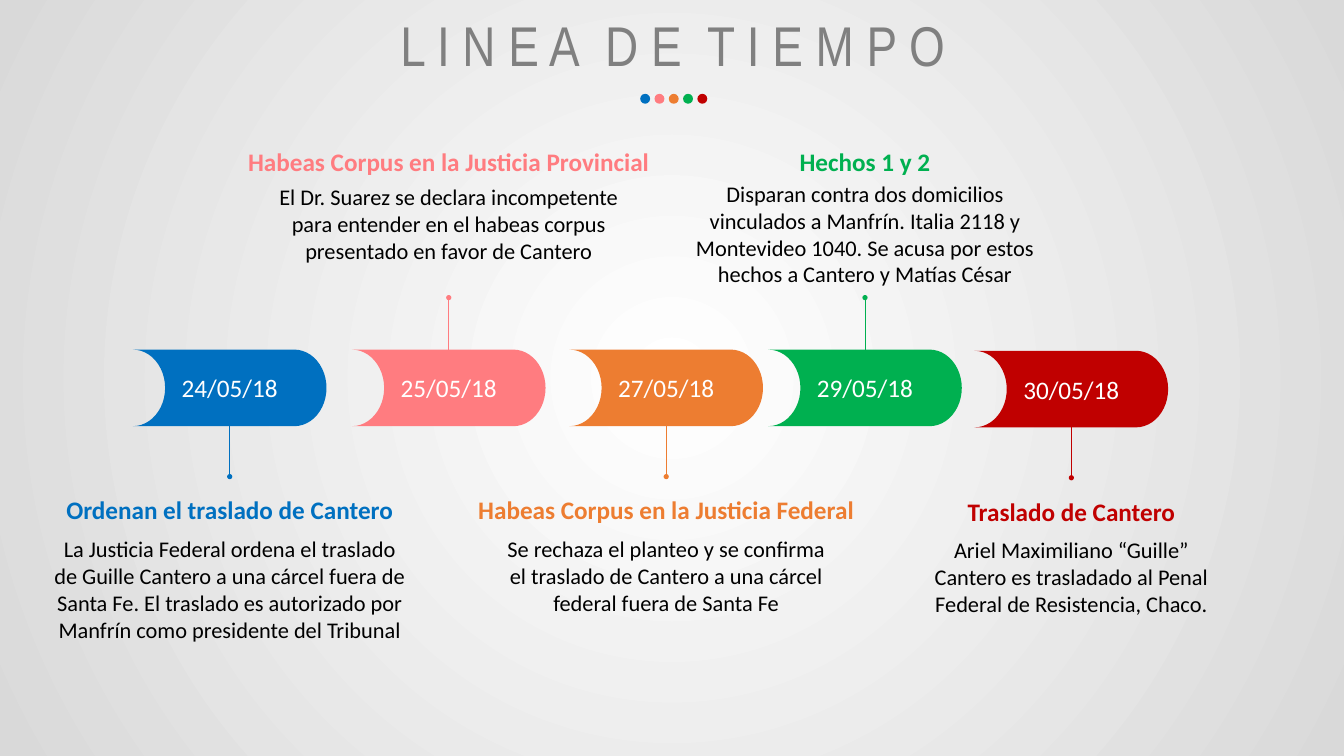
import dataclasses

import pptx
import pptx.dml.color
import pptx.enum.shapes
import pptx.enum.text
import pptx.oxml.ns
import pptx.util
from lxml import etree

Cm = pptx.util.Cm
Pt = pptx.util.Pt
Shape = pptx.enum.shapes.MSO_SHAPE
Anchor = pptx.enum.text.MSO_ANCHOR
qn = pptx.oxml.ns.qn


def rgb(code):
    return pptx.dml.color.RGBColor.from_string(code)


@dataclasses.dataclass
class Theme:
    blue: str = "0070C0"
    pink: str = "FF7C80"
    orange: str = "ED7D31"
    green: str = "00B050"
    red: str = "C00000"
    gray: str = "808080"
    black: str = "000000"
    white: str = "FFFFFF"
    edge: str = "D9D9D9"
    face: str = "Calibri"
    narrow: str = "Arial Narrow"
    big: int = 40
    head: int = 18
    body: int = 16


@dataclasses.dataclass
class Step:
    date: str
    color: str
    left: float
    head: str
    wide: float        # width of the heading
    body: str
    span: float        # width of the body text
    rows: int
    up: bool = False
    drop: float = 0    # small shift of the whole step
    lift: float = 0    # upward shift of the body text


class Board:
    def __init__(self, slide, theme):
        self.slide, self.theme = slide, theme

    def backdrop(self):
        fill = self.slide.background.fill
        fill.gradient()
        for stop, code in zip(fill.gradient_stops, (self.theme.white, self.theme.edge)):
            stop.color.rgb = rgb(code)
        grad = self.slide.element.find(".//" + qn("a:gradFill"))
        grad.remove(grad.find(qn("a:lin")))
        ring = etree.SubElement(grad, qn("a:path"), path="circle")
        etree.SubElement(ring, qn("a:fillToRect"), l="50000", t="50000", r="50000", b="50000")

    def run(self, para, text, size, color, face=None, bold=False):
        run = para.add_run()
        run.text = text
        font = run.font
        font.name, font.size, font.bold = face or self.theme.face, Pt(size), bold
        font.color.rgb = rgb(color)
        return run

    def center(self, frame, anchor):
        frame.word_wrap = True
        frame.vertical_anchor = anchor
        para = frame.paragraphs[0]
        para.alignment = pptx.enum.text.PP_ALIGN.CENTER
        return para

    def title(self, words, left, top, width, height):
        box = self.slide.shapes.title
        box.left, box.top, box.width, box.height = Cm(left), Cm(top), Cm(width), Cm(height)
        para = self.center(box.text_frame, Anchor.BOTTOM)
        box.text_frame.auto_size = pptx.enum.text.MSO_AUTO_SIZE.NONE
        para.line_spacing = 0.9
        style = (self.theme.big, self.theme.gray, self.theme.narrow)
        for i, word in enumerate(words):
            if i:  # widened gap between words
                gap = self.run(para, " ", *style)
                gap.font._element.set("spc", "900")
            self.run(para, word, *style)

    def text(self, text, mid, top, width, height, size, color, bold=False):
        box = self.slide.shapes.add_textbox(Cm(mid - width / 2), Cm(top), Cm(width), Cm(height))
        para = self.center(box.text_frame, Anchor.TOP)
        self.run(para, text, size, color, bold=bold)

    def shape(self, kind, left, top, width, height, color, home=None):
        shapes = (home or self.slide).shapes
        shape = shapes.add_shape(kind, Cm(left), Cm(top), Cm(width), Cm(height))
        shape.shadow.inherit = False
        shape.fill.solid()
        shape.fill.fore_color.rgb = rgb(color)
        shape.line.fill.background()
        return shape

    def pill(self, date, left, top, width, height, color):
        pill = self.shape(Shape.FLOWCHART_STORED_DATA, left, top, width, height, color)
        pill.element.spPr.find(qn("a:xfrm")).set("flipH", "1")
        para = self.center(pill.text_frame, Anchor.MIDDLE)
        self.run(para, date, self.theme.head, self.theme.white)
        return pill

    def stem(self, pill, side, mid, end, color):
        line = self.slide.shapes.add_connector(
            pptx.enum.shapes.MSO_CONNECTOR.STRAIGHT, Cm(mid), Cm(end), Cm(mid), Cm(end))
        line.begin_connect(pill, side)
        line.line.color.rgb = rgb(color)
        line.line.width = Pt(0.5)
        etree.SubElement(line.element.spPr, qn("a:effectLst"))

    def dot(self, mid, center, size, color, home=None):
        self.shape(Shape.OVAL, mid - size / 2, center - size / 2, size, size, color, home)

    def step(self, step):
        wide, tall, tip = 4.88, 1.93, 0.13
        top, mid = 8.81 + step.drop, step.left + wide / 2
        if step.up:
            side, end, head, body = 0, 7.5, 3.56, 4.5
        else:
            side, end, head, body = 2, 12.01, 12.34, 13.36
        end, head, body = (y + step.drop for y in (end, head, body))
        pill = self.pill(step.date, step.left, top, wide, tall, step.color)
        self.stem(pill, side, mid, end, step.color)
        self.dot(mid, end, tip, step.color)
        self.text(step.head, mid, head, step.wide, 1.02, self.theme.head, step.color, True)
        self.text(step.body, mid, body - step.lift, step.span, 0.25 + 0.69 * step.rows,
                  self.theme.body, self.theme.black)

    def legend(self, colors):
        group = self.slide.shapes.add_group_shape()
        for i, color in enumerate(colors):
            self.dot(16.26 + 0.36 * i, 2.49, 0.25, color, group)


def main():
    deck = pptx.Presentation()
    deck.slide_width, deck.slide_height = Cm(33.87), Cm(19.05)
    theme = Theme()
    board = Board(deck.slides.add_slide(deck.slide_layouts[5]), theme)

    # Background and title
    board.backdrop()
    board.title(["L I N E A", "D E", "T I E M P O"], 5.74, 0.23, 22.43, 1.88)

    # Timeline steps
    steps = [
        Step("24/05/18", theme.blue, 3.35, "Ordenan el traslado de Cantero", 8.89,
             "La Justicia Federal ordena el traslado de Guille Cantero a una cárcel fuera de "
             "Santa Fe. El traslado es autorizado por Manfrín como presidente del Tribunal",
             9.42, 4),
        Step("25/05/18", theme.pink, 8.87, "Habeas Corpus en la Justicia Provincial", 10.64,
             "El Dr. Suarez se declara incompetente para entender en el habeas corpus "
             "presentado en favor de Cantero", 9.09, 3, up=True),
        Step("27/05/18", theme.orange, 14.35, "Habeas Corpus en la Justicia Federal", 10.13,
             "Se rechaza el planteo y se confirma el traslado de Cantero a una cárcel "
             "federal fuera de Santa Fe", 8.61, 3),
        Step("29/05/18", theme.green, 19.36, "Hechos 1 y 2", 6.86,
             "Disparan contra dos domicilios vinculados a Manfrín. Italia 2118 y Montevideo "
             "1040. Se acusa por estos hechos a Cantero y Matías César",
             9.22, 4, up=True, lift=0.09),
        Step("30/05/18", theme.red, 24.56, "Traslado de Cantero", 6.05,
             "Ariel Maximiliano “Guille” Cantero es trasladado al Penal Federal de "
             "Resistencia, Chaco.", 7.67, 3, drop=0.03),
    ]
    for step in steps:
        board.step(step)

    # Row of dots under the title
    board.legend([step.color for step in steps])
    deck.save("out.pptx")


if __name__ == "__main__":
    main()
